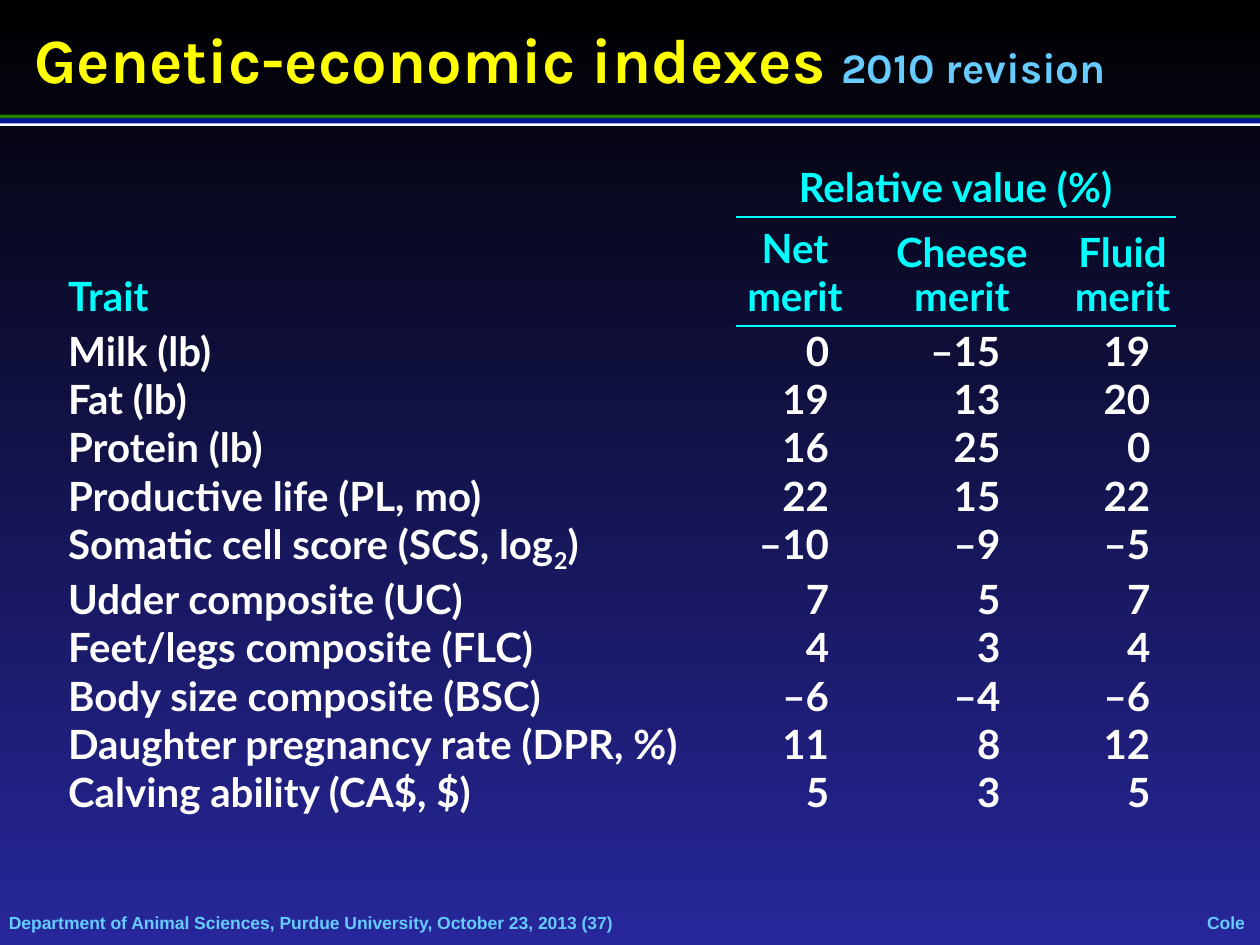
from lxml import etree
from pptx import Presentation
from pptx.dml.color import RGBColor
from pptx.enum.shapes import MSO_SHAPE
from pptx.enum.text import MSO_ANCHOR, MSO_AUTO_SIZE, PP_ALIGN
from pptx.oxml import parse_xml
from pptx.oxml.ns import qn
from pptx.util import Inches, Pt

BLACK = RGBColor(0, 0, 0)
NAVY = RGBColor(0x27, 0x27, 0x9B)
BLUE = RGBColor(0x00, 0x17, 0x99)
GREEN = RGBColor(0x2A, 0x7E, 0x00)
WHITE = RGBColor(255, 255, 255)
YELLOW = RGBColor(255, 255, 0)
CYAN = RGBColor(0, 255, 255)
SKY = RGBColor(0x66, 0xCC, 0xFF)

NO_GRID = "{2D5ABB26-0587-4C30-8999-92F81FD0307C}"
MAIN_NS = "http://schemas.openxmlformats.org/drawingml/2006/main"

HEADS = ["Net merit", "Cheese\nmerit", "Fluid merit"]
TRAITS = [
    ("Milk (lb)", "0", "–15", "19"),
    ("Fat (lb)", "19", "13", "20"),
    ("Protein (lb)", "16", "25", "0"),
    ("Productive life (PL, mo)", "22", "15", "22"),
    ("Somatic cell score (SCS, log2)", "–10", "–9", "–5"),
    ("Udder composite (UC)", "7", "5", "7"),
    ("Feet/legs composite (FLC)", "4", "3", "4"),
    ("Body size composite (BSC)", "–6", "–4", "–6"),
    ("Daughter pregnancy rate (DPR, %)", "11", "8", "12"),
    ("Calving ability (CA$, $)", "5", "3", "5"),
]


def style(run, size, color, face):
    font = run.font
    font.size, font.name, font.bold = Pt(size), face, True
    font.color.rgb = color


def add_title(slide, left, top, width, height):
    title = slide.shapes.title
    title.left, title.top, title.width, title.height = left, top, width, height
    frame = title.text_frame
    frame.auto_size = MSO_AUTO_SIZE.NONE
    frame.vertical_anchor = MSO_ANCHOR.MIDDLE
    para = frame.paragraphs[0]
    para.alignment = PP_ALIGN.LEFT
    for text, size, color in [("Genetic-economic indexes ", 36, YELLOW),
                              ("2010 revision", 24, SKY)]:
        run = para.add_run()
        run.text = text
        style(run, size, color, "Karla")


def add_bands(slide, left, top, width):
    # The blue band lies over the edges of the other two
    for drop, high, color in [(0, 0.03, GREEN), (0.06, 0.03, WHITE),
                              (0.03, 0.04, BLUE)]:
        band = slide.shapes.add_shape(MSO_SHAPE.RECTANGLE, left,
                                      top + Inches(drop), width, Inches(high))
        band.shadow.inherit = False
        band.fill.solid()
        band.fill.fore_color.rgb = color
        band.line.fill.background()


def add_note(slide, text, left, top, width, height, align, wrap):
    frame = slide.shapes.add_textbox(left, top, width, height).text_frame
    frame.margin_left = frame.margin_right = 0
    frame.margin_top = frame.margin_bottom = 0
    frame.word_wrap = wrap
    frame.vertical_anchor = MSO_ANCHOR.MIDDLE
    para = frame.paragraphs[0]
    para.text = text
    para.alignment = align
    style(para.runs[0], 10, SKY, "Arial")


def fill_cell(cell, text, color, align, top=0, right=0, bottom=0,
              anchor=MSO_ANCHOR.TOP):
    cell.fill.background()
    cell.margin_left, cell.margin_top = 0, Inches(top)
    cell.margin_right, cell.margin_bottom = Inches(right), Inches(bottom)
    cell.vertical_anchor = anchor
    cell.text_frame.text = text
    for para in cell.text_frame.paragraphs:
        para.alignment = align
        for run in para.runs:
            style(run, 23, color, "Lato")


def add_rule(cell, side):
    line = parse_xml(
        f'<a:{side} xmlns:a="{MAIN_NS}" w="{Pt(1.5)}"><a:solidFill>'
        f'<a:srgbClr val="{CYAN}"/></a:solidFill></a:{side}>')
    cell._tc.get_or_add_tcPr().insert(0, line)


def lower_two(cell):
    # Split the label so that its 2 becomes a subscript
    para = cell.text_frame.paragraphs[0]
    start, end = para.text.split("2")
    para.runs[0].text = start
    for text in ("2", end):
        run = para.add_run()
        run.text = text
        style(run, 23, WHITE, "Lato")
    para.runs[1].font._element.set("baseline", "-25000")


def add_grid(slide, left, top, width, height):
    table = slide.shapes.add_table(len(TRAITS) + 2, 4, left, top,
                                   width, height).table
    table.first_row = table.horz_banding = False
    table._tbl.tblPr.find(qn("a:tableStyleId")).text = NO_GRID
    for col, wide in zip(table.columns, (5.3, 0.94, 1.71, 0.84)):
        col.width = Inches(wide)
    for row in table.rows:
        row.height = Inches(0.38)
    table.rows[0].height, table.rows[1].height = Inches(0.43), Inches(0.86)

    # Heading rows
    table.cell(0, 0).merge(table.cell(1, 0))
    table.cell(0, 1).merge(table.cell(0, 3))
    fill_cell(table.cell(0, 0), "Trait", CYAN, PP_ALIGN.LEFT, bottom=0.05,
              anchor=MSO_ANCHOR.BOTTOM)
    fill_cell(table.cell(0, 1), "Relative value (%)", CYAN, PP_ALIGN.CENTER,
              bottom=0.05)
    for col, head in enumerate(HEADS, 1):
        cell = table.cell(1, col)
        fill_cell(cell, head, CYAN, PP_ALIGN.CENTER, top=0.05, bottom=0.05,
                  anchor=MSO_ANCHOR.BOTTOM)
        if col > 1:
            for para in cell.text_frame.paragraphs:
                para.line_spacing = 0.9
        add_rule(table.cell(0, col), "lnB")
        add_rule(cell, "lnT")

    # Trait rows
    for row, (trait, *values) in enumerate(TRAITS, 2):
        label = table.cell(row, 0)
        fill_cell(label, trait, WHITE, PP_ALIGN.LEFT)
        if "log2" in trait:
            lower_two(label)
        for col, value in enumerate(values, 1):
            fill_cell(table.cell(row, col), value, WHITE, PP_ALIGN.RIGHT,
                      right=0.55 if col == 2 else 0.2)


def main():
    deck = Presentation()
    deck.slide_width, deck.slide_height = Inches(10), Inches(7.5)
    slide = deck.slides.add_slide(deck.slide_layouts[5])

    # Background, dark at the top
    fill = slide.background.fill
    fill.gradient()
    fill.gradient_angle = 270
    for stop, color, place in zip(fill.gradient_stops, (BLACK, NAVY), (0, 1)):
        stop.color.rgb = color
        stop.position = place

    add_note(slide, "Department of Animal Sciences, Purdue University, "
             "October 23, 2013 (37)", Inches(0.07), Inches(7.24),
             Inches(8.09), Inches(0.17), PP_ALIGN.LEFT, True)
    add_note(slide, "Cole", Inches(9.58), Inches(7.24), Inches(0.3),
             Inches(0.17), PP_ALIGN.CENTER, False)
    add_bands(slide, 0, Inches(0.91), deck.slide_width)
    add_grid(slide, Inches(0.54), Inches(1.29), Inches(8.79), Inches(5.13))
    add_title(slide, Inches(0.17), Inches(0.11), Inches(9.66), Inches(0.7))
    deck.save("out.pptx")


if __name__ == "__main__":
    main()
